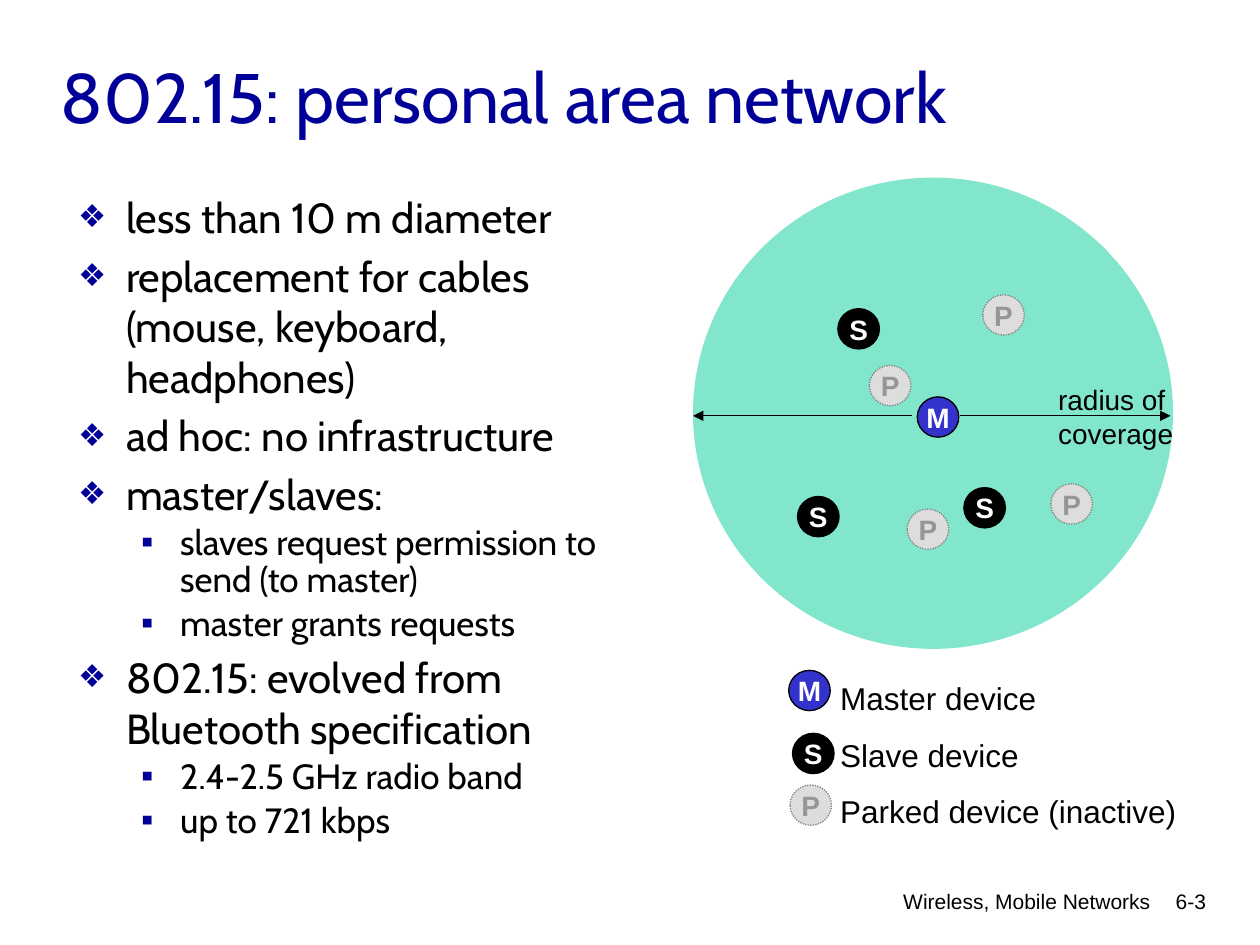
from lxml import etree
from pptx import Presentation
from pptx.dml.color import RGBColor
from pptx.enum.dml import MSO_LINE_DASH_STYLE as Dash
from pptx.enum.shapes import MSO_CONNECTOR as Connector, MSO_SHAPE as Shape
from pptx.enum.text import MSO_ANCHOR as Anchor, MSO_AUTO_SIZE as AutoSize, PP_ALIGN as Align
from pptx.oxml.ns import qn
from pptx.util import Inches, Pt

NAVY = RGBColor(0x00, 0x00, 0x99)
BLACK = RGBColor(0x00, 0x00, 0x00)
WHITE = RGBColor(0xFF, 0xFF, 0xFF)
GREEN = RGBColor(0x00, 0xCC, 0x99)
BLUE = RGBColor(0x33, 0x33, 0xCC)
PALE = RGBColor(0xDD, 0xDD, 0xDD)
GREY = RGBColor(0x80, 0x80, 0x80)
MID_GREY = RGBColor(0x96, 0x96, 0x96)

DEVICE_WIDTH, DEVICE_HEIGHT = 0.33, 0.32
DEVICE_STYLES = {
    "M": (BLUE, BLACK, WHITE, Dash.SOLID),
    "S": (BLACK, BLACK, WHITE, Dash.SOLID),
    "P": (PALE, GREY, MID_GREY, Dash.ROUND_DOT),
}
DEVICES = [
    ("M", 1.78, 1.74),
    ("S", 1.15, 1.04), ("S", 2.15, 2.46), ("S", 0.83, 2.53),
    ("P", 2.3, 0.93), ("P", 1.7, 2.63), ("P", 1.4, 1.49), ("P", 2.84, 2.43),
]
LEGEND = [
    ("M", 0.03, 0.13, "Master device"),
    ("S", 0.06, 0.63, "Slave device"),
    ("P", 0.04, 1.04, "Parked device (inactive)"),
]
BULLETS = [
    (0, "less than 10 m diameter"),
    (0, "replacement for cables (mouse, keyboard, headphones)"),
    (0, "ad hoc: no infrastructure"),
    (0, "master/slaves:"),
    (1, "slaves request permission to send (to master)"),
    (1, "master grants requests"),
    (0, "802.15: evolved from Bluetooth specification"),
    (1, "2.4-2.5 GHz radio band"),
    (1, "up to 721 kbps"),
]
LEVELS = [
    {"size": 24, "left": 0.38, "hang": 0.38, "mark": "❖", "scale": "75000", "spacing": 1.0},
    {"size": 20, "left": 0.81, "hang": 0.31, "mark": "▪", "scale": "100000", "spacing": Pt(21)},
]


def place(shape, box):
    """Move a shape to a box given in inches."""
    shape.left, shape.top, shape.width, shape.height = map(Inches, box)


def add_span(para, text, size, color, font="Arial", bold=False):
    """Add one formatted run to a paragraph."""
    span = para.add_run()
    span.text = text
    span.font.name = font
    span.font.size = Pt(size)
    span.font.bold = bold
    span.font.color.rgb = color


def add_label(page, box, lines, size, align=Align.LEFT, spacing=1.0, wrap=True):
    """Add a text box with one paragraph per line."""
    frame = page.shapes.add_textbox(*map(Inches, box)).text_frame
    frame.word_wrap = wrap
    for index, line in enumerate(lines):
        para = frame.add_paragraph() if index else frame.paragraphs[0]
        para.alignment = align
        para.line_spacing = spacing
        add_span(para, line, size, BLACK)


def add_device(page, letter, left, top):
    """Add a lettered device circle."""
    fill, outline, color, dash = DEVICE_STYLES[letter]
    box = (left, top, DEVICE_WIDTH, DEVICE_HEIGHT)
    device = page.shapes.add_shape(Shape.OVAL, *map(Inches, box))
    device.shadow.inherit = False
    device.fill.solid()
    device.fill.fore_color.rgb = fill
    device.line.color.rgb = outline
    device.line.width = Pt(0.75)
    device.line.dash_style = dash
    frame = device.text_frame
    frame.margin_left = frame.margin_right = frame.margin_top = frame.margin_bottom = 0
    frame.word_wrap = False
    frame.vertical_anchor = Anchor.MIDDLE
    para = frame.paragraphs[0]
    para.alignment = Align.CENTER
    add_span(para, letter, 16, color, bold=True)


def add_arrow(page, start, end, y):
    """Add a horizontal arrow that points at its end."""
    ends = map(Inches, (start, y, end, y))
    arrow = page.shapes.add_connector(Connector.STRAIGHT, *ends)
    arrow.line.color.rgb = BLACK
    arrow.line.width = Pt(0.75)
    etree.SubElement(arrow.line._get_or_add_ln(), qn("a:tailEnd"), type="triangle")
    etree.SubElement(arrow._element.spPr, qn("a:effectLst"))


def fill_title(page, box):
    """Fill the title placeholder."""
    title = page.shapes.title
    place(title, box)
    frame = title.text_frame
    frame.auto_size = AutoSize.NONE
    frame.vertical_anchor = Anchor.MIDDLE
    para = frame.paragraphs[0]
    para.alignment = Align.LEFT
    add_span(para, "802.15: personal area network", 40, NAVY, "Cabin")


def format_bullet(para, level):
    """Set the indent, spacing and marker of a list paragraph."""
    para.line_spacing = level["spacing"]
    para.space_before = Pt(level["size"] * 0.2)
    props = para._p.get_or_add_pPr()
    props.set("marL", str(Inches(level["left"])))
    props.set("indent", str(-Inches(level["hang"])))
    color = etree.SubElement(props, qn("a:buClr"))
    etree.SubElement(color, qn("a:srgbClr"), val=str(NAVY))
    etree.SubElement(props, qn("a:buSzPct"), val=level["scale"])
    etree.SubElement(props, qn("a:buFont"), typeface="Arial")
    etree.SubElement(props, qn("a:buChar"), char=level["mark"])


def fill_body(page, box):
    """Fill the body placeholder with the two-level list."""
    body = page.placeholders[1]
    place(body, box)
    frame = body.text_frame
    frame.auto_size = AutoSize.NONE
    for index, (depth, text) in enumerate(BULLETS):
        para = frame.add_paragraph() if index else frame.paragraphs[0]
        para.level = depth
        format_bullet(para, LEVELS[depth])
        add_span(para, text, LEVELS[depth]["size"], BLACK, "Cabin")


def add_coverage(page, box):
    """Add the coverage area with its devices and radius arrows."""
    left, top, width, height = box
    area = page.shapes.add_shape(Shape.OVAL, *map(Inches, box))
    area.shadow.inherit = False
    area.fill.solid()
    area.fill.fore_color.rgb = GREEN
    color = area._element.spPr.find(qn("a:solidFill"))[0]
    etree.SubElement(color, qn("a:alpha"), val="49000")
    area.line.fill.background()
    middle = top + 1.89
    add_arrow(page, left + 2.12, left + width - 0.02, middle)
    add_arrow(page, left + 1.74, left, middle)
    add_label(page, (left + 2.8, top + 1.58, 1.11, 0.64),
              ["radius of", "coverage"], 16, wrap=False)
    for letter, x, y in DEVICES:
        add_device(page, letter, left + x, top + y)


def add_legend(page, box):
    """Add the key to the device circles."""
    left, top, width, height = box
    add_label(page, (left + 0.34, top, width - 0.34, height),
              [name for *_, name in LEGEND], 18, spacing=1.5, wrap=False)
    for letter, x, y, _ in LEGEND:
        add_device(page, letter, left + x, top + y)


def add_footer(page, box):
    """Add the footer text and page number."""
    left, top, width, height = box
    add_label(page, (left, top, 4.22, height), ["Wireless, Mobile Networks"], 12, Align.RIGHT)
    add_label(page, (left + width - 0.74, top, 0.74, height), ["6-3"], 12, Align.RIGHT)


def main():
    """Build and save the deck."""
    deck = Presentation()
    deck.slide_width, deck.slide_height = Inches(10), Inches(7.5)
    page = deck.slides.add_slide(deck.slide_layouts[1])
    add_footer(page, (5.01, 7, 4.66, 0.35))
    add_coverage(page, (5.5, 1.41, 3.81, 3.74))
    add_legend(page, (6.23, 5.19, 3.21, 1.45))
    fill_title(page, (0.38, 0.3, 8.5, 0.92))
    fill_body(page, (0.52, 1.47, 4.88, 6.03))
    deck.save("out.pptx")


if __name__ == "__main__":
    main()
